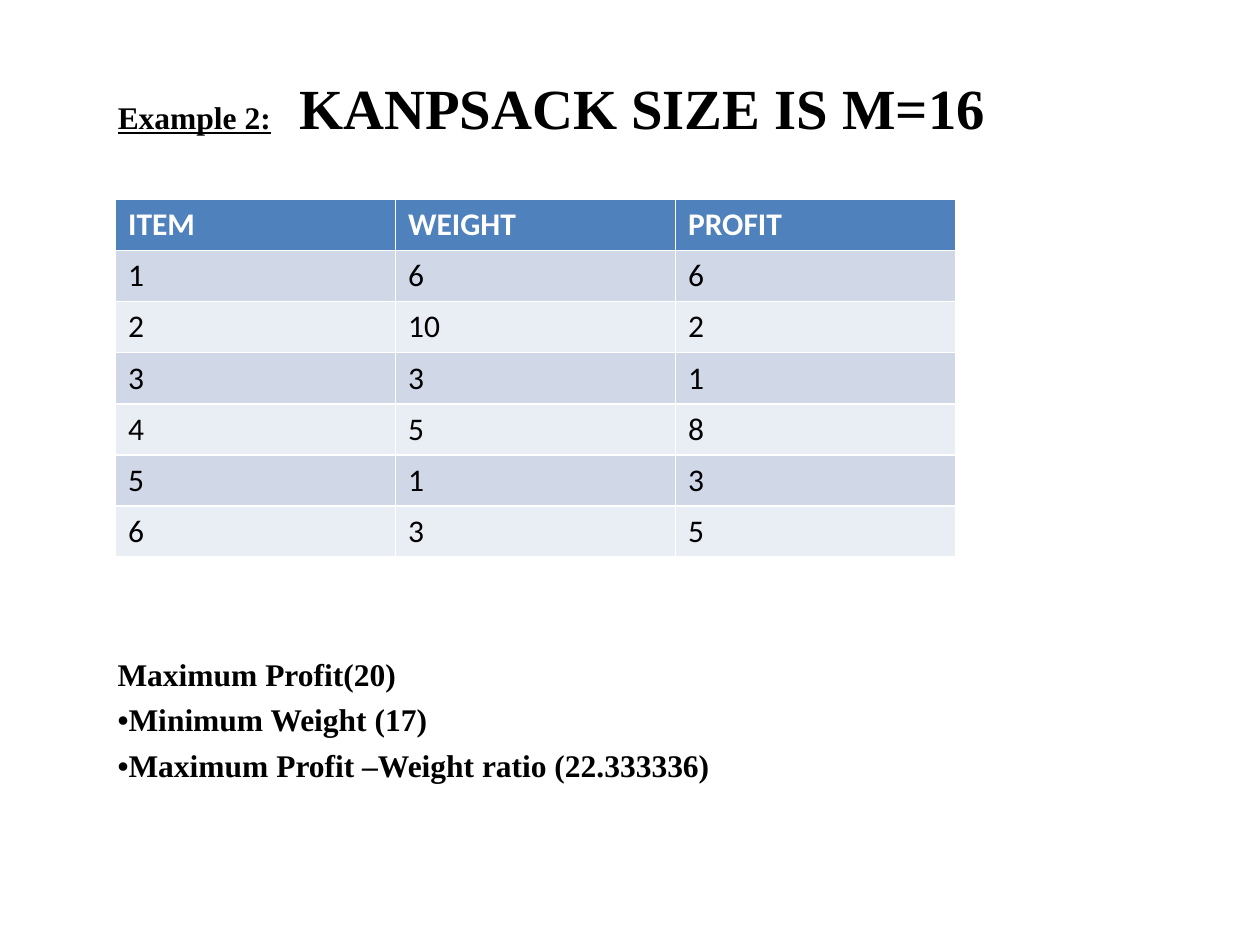
from pptx import Presentation
from pptx.dml.color import RGBColor
from pptx.enum.text import MSO_ANCHOR, MSO_AUTO_SIZE, PP_ALIGN
from pptx.util import Cm, Pt

BOTTOM = MSO_ANCHOR.BOTTOM
NO_FIT = MSO_AUTO_SIZE.NONE
LEFT = PP_ALIGN.LEFT
SERIF = "Times New Roman"


def set_font(font, name, size, color, bold):
    font.name = name
    font.size = Pt(size)
    font.bold = bold
    font.color.rgb = RGBColor.from_string(color)


deck = Presentation()
deck.slide_width, deck.slide_height = Cm(25.4), Cm(19.05)
page = deck.slides.add_slide(deck.slide_layouts[5])

title = page.shapes.title
title.left, title.top, title.width, title.height = Cm(2.12), Cm(1.27), Cm(22.01), Cm(1.69)
title.text_frame.vertical_anchor = BOTTOM
title.text_frame.auto_size = NO_FIT
para = title.text_frame.paragraphs[0]
para.alignment = LEFT
for text, size, underline in [("Example 2:", 18, True), ("  KANPSACK SIZE IS M=16", 32.4, False)]:
    span = para.add_run()
    span.text = text
    set_font(span.font, SERIF, size, "000000", True)
    span.font.underline = underline

results = [
    "Maximum Profit(20)",
    "•Minimum Weight (17)",
    "•Maximum Profit –Weight ratio (22.333336)",
]
box = page.shapes.add_textbox(Cm(2.12), Cm(12.28), Cm(18.1), Cm(4.87))
frame = box.text_frame
frame.word_wrap = True
frame.margin_top = Cm(0.93)
for index, text in enumerate(results):
    para = frame.add_paragraph() if index else frame.paragraphs[0]
    para.text = text
    para.space_before = Pt(4.2 if index else 0)
    set_font(para.font, SERIF, 18, "000000", True)

items = [
    ("ITEM", "WEIGHT", "PROFIT"),
    (1, 6, 6),
    (2, 10, 2),
    (3, 3, 1),
    (4, 5, 8),
    (5, 1, 3),
    (6, 3, 5),
]
table = page.shapes.add_table(
    len(items), len(items[0]), Cm(2.33), Cm(4.02), Cm(16.93), Cm(7.21)
).table
for row, values in enumerate(items):
    header = row == 0
    fill = "4F81BD" if header else "D0D8E8" if row % 2 else "E9EDF4"
    for column, value in enumerate(values):
        cell = table.cell(row, column)
        cell.text = str(value)
        cell.fill.solid()
        cell.fill.fore_color.rgb = RGBColor.from_string(fill)
        set_font(cell.text_frame.paragraphs[0].font, "Calibri", 18,
                 "FFFFFF" if header else "000000", header)

deck.save("out.pptx")
